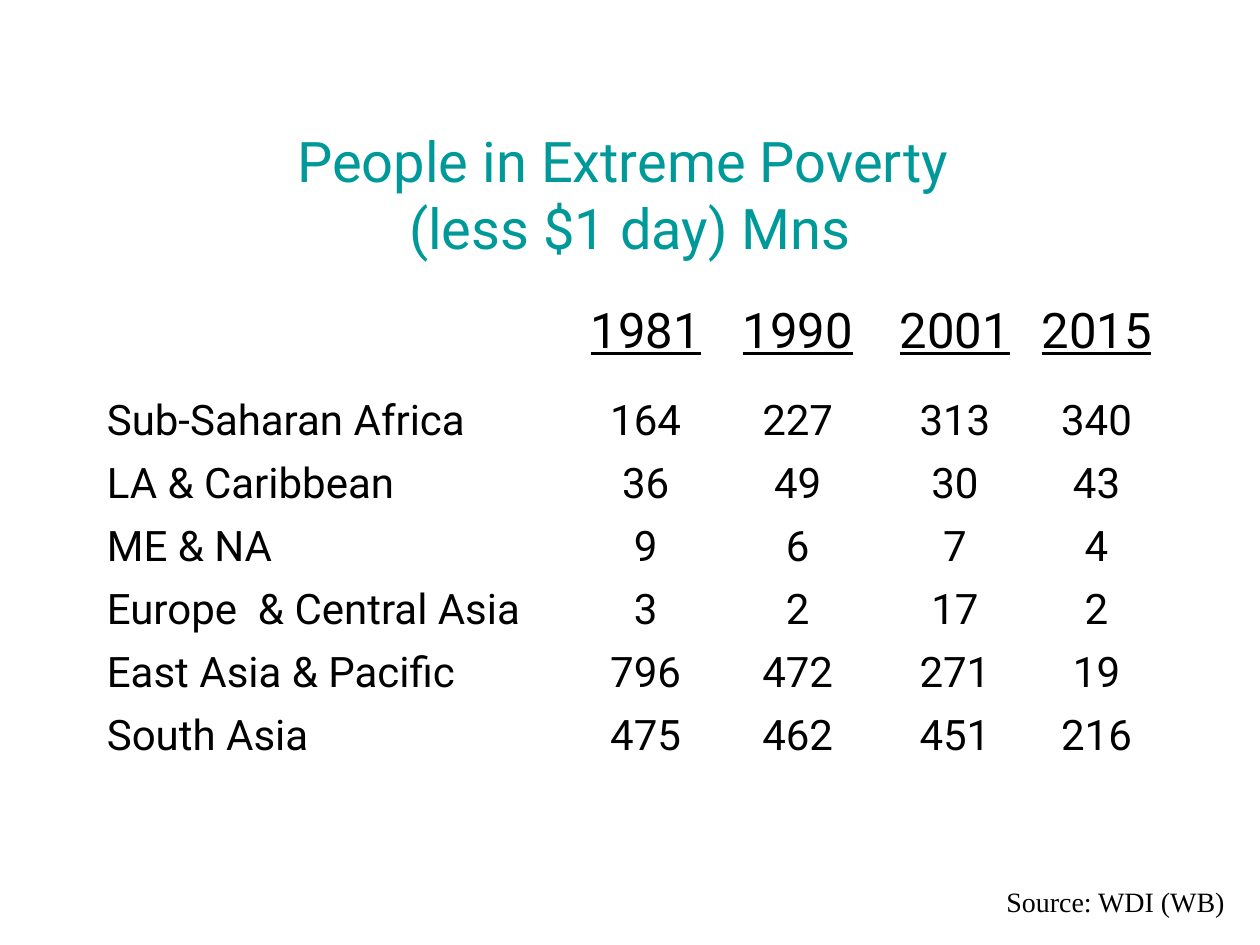
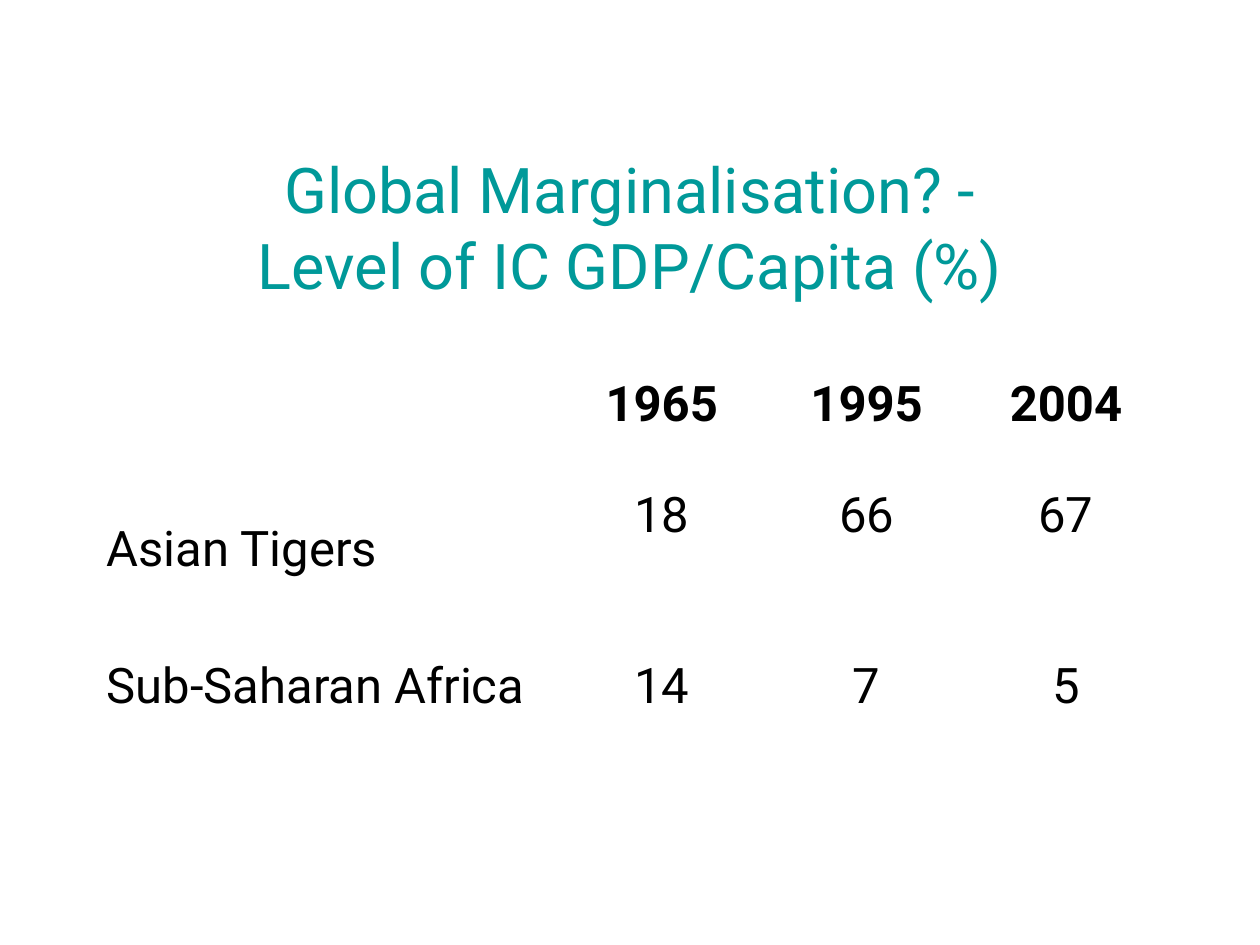
import dataclasses

import pptx
import pptx.dml.color
import pptx.enum.text
import pptx.util

Cm = pptx.util.Cm
ALIGN = pptx.enum.text.PP_ALIGN
ANCHOR = pptx.enum.text.MSO_ANCHOR


@dataclasses.dataclass(frozen=True)
class Theme:
    title_colour: str = "009999"
    text_colour: str = "000000"
    font: str = "Roboto"
    source_font: str = "Times New Roman"
    poverty_title_size: int = 32
    income_title_size: int = 36
    large_size: int = 28
    body_size: int = 24
    source_size: int = 16
    left: float = 1.9
    width: float = 21.6


THEME = Theme()


def style_paragraph(para, size, colour=THEME.text_colour, name=THEME.font,
                    bold=False, underline=False, align=ALIGN.LEFT):
    para.alignment = align
    font = para.font
    font.name = name
    font.size = pptx.util.Pt(size)
    font.bold = bold
    font.underline = underline
    font.color.rgb = pptx.dml.color.RGBColor.from_string(colour)


def add_page(deck):
    return deck.slides.add_slide(deck.slide_layouts[6])


def add_title(page, top, text, size):
    box = page.shapes.add_textbox(Cm(THEME.left), Cm(top), Cm(THEME.width), Cm(3.18))
    frame = box.text_frame
    frame.word_wrap = True
    frame.vertical_anchor = ANCHOR.MIDDLE
    frame.text = text
    style_paragraph(frame.paragraphs[0], size, THEME.title_colour, align=ALIGN.CENTER)


def add_source(page, text):
    box = page.shapes.add_textbox(Cm(20.04), Cm(17.7), Cm(4.93), Cm(0.94))
    box.text_frame.word_wrap = False
    box.text_frame.text = text
    style_paragraph(box.text_frame.paragraphs[0], THEME.source_size,
                    name=THEME.source_font)


def add_data_table(page, top, column_widths, header_height, row_height,
                   years, rows, body_size, **header_style):
    """Add an unruled table: years across the top, one region per row."""
    lines = [("", *years), *rows]
    height = header_height + row_height * len(rows)
    table = page.shapes.add_table(
        len(lines), len(column_widths),
        Cm(THEME.left), Cm(top), Cm(sum(column_widths)), Cm(height)).table
    table.first_row = False
    table.horz_banding = False
    for column, width in zip(table.columns, column_widths):
        column.width = Cm(width)

    for row_index, line in enumerate(lines):
        is_header = row_index == 0
        table.rows[row_index].height = Cm(header_height if is_header else row_height)
        for column_index, value in enumerate(line):
            cell = table.cell(row_index, column_index)
            cell.fill.background()
            cell.vertical_anchor = ANCHOR.MIDDLE
            cell.text = str(value)
            style_paragraph(
                cell.text_frame.paragraphs[0],
                THEME.large_size if is_header else body_size,
                align=ALIGN.CENTER if column_index else ALIGN.LEFT,
                **(header_style if is_header else {}))
    return table


def build_poverty_page(deck):
    page = add_page(deck)
    add_title(page, 2.31, "People in Extreme Poverty \v(less $1 day) Mns",
              THEME.poverty_title_size)
    regions = [
        ("Sub-Saharan Africa", 164, 227, 313, 340),
        ("LA & Caribbean", 36, 49, 30, 43),
        ("ME & NA", 9, 6, 7, 4),
        ("Europe  & Central Asia", 3, 2, 17, 2),
        ("East Asia & Pacific", 796, 472, 271, 19),
        ("South Asia", 475, 462, 451, 216),
    ]
    add_data_table(page, 5.54, (9.74, 2.75, 3.38, 2.96, 2.75), 2.31, 1.25,
                   (1981, 1990, 2001, 2015), regions, THEME.body_size,
                   underline=True)
    add_source(page, "Source: WDI (WB)")


def build_income_page(deck):
    page = add_page(deck)
    add_title(page, 2.97, "Global Marginalisation? -\vLevel of IC GDP/Capita (%)",
              THEME.income_title_size)
    regions = [
        ("Asian Tigers", 18, 66, 67),
        ("Sub-Saharan Africa", 14, 7, 5),
    ]
    table = add_data_table(page, 7.32, (9.32, 4.24, 4.02, 4.02), 1.7, 2.77,
                           (1965, 1995, 2004), regions, THEME.large_size,
                           bold=True)
    tigers_label = table.cell(1, 0)
    for cell in (tigers_label, *table.rows[2].cells):
        cell.vertical_anchor = ANCHOR.BOTTOM


def main():
    deck = pptx.Presentation()
    deck.slide_width = Cm(25.4)
    deck.slide_height = Cm(19.05)
    build_poverty_page(deck)
    build_income_page(deck)
    deck.save("out.pptx")


if __name__ == "__main__":
    main()
